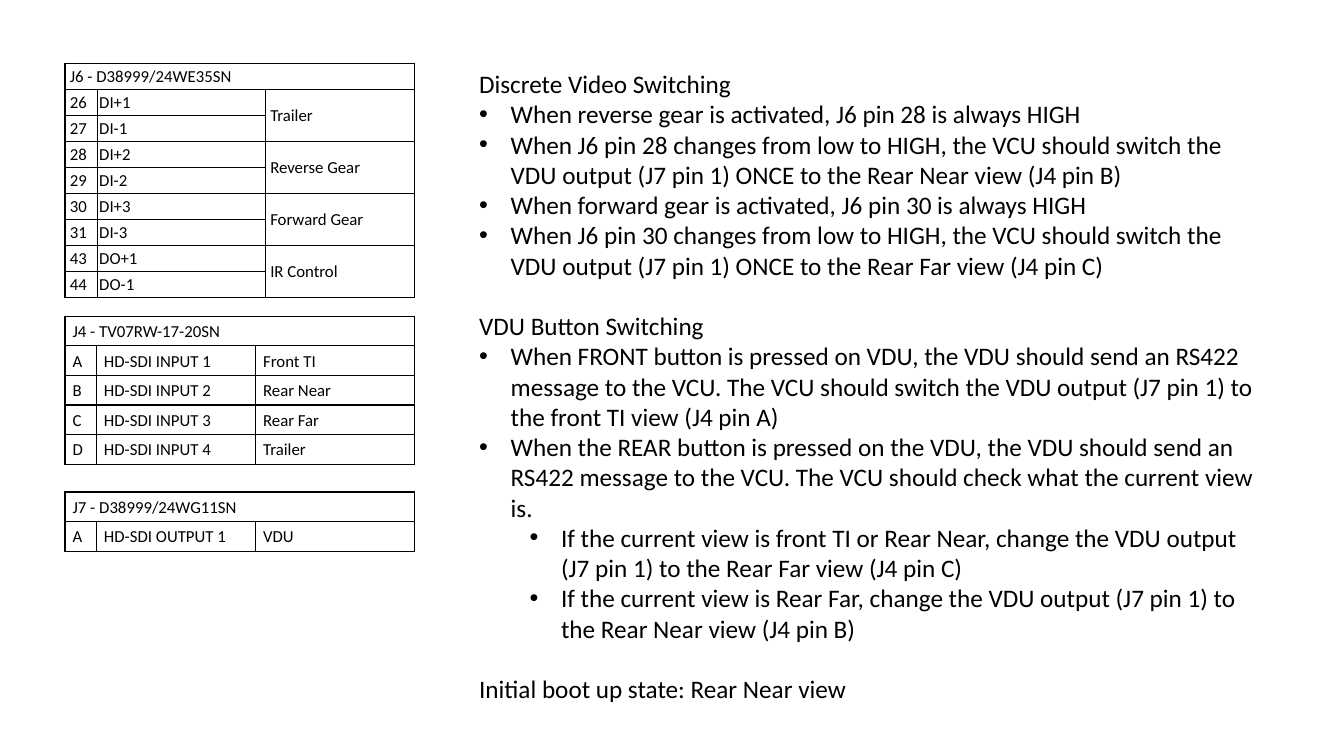
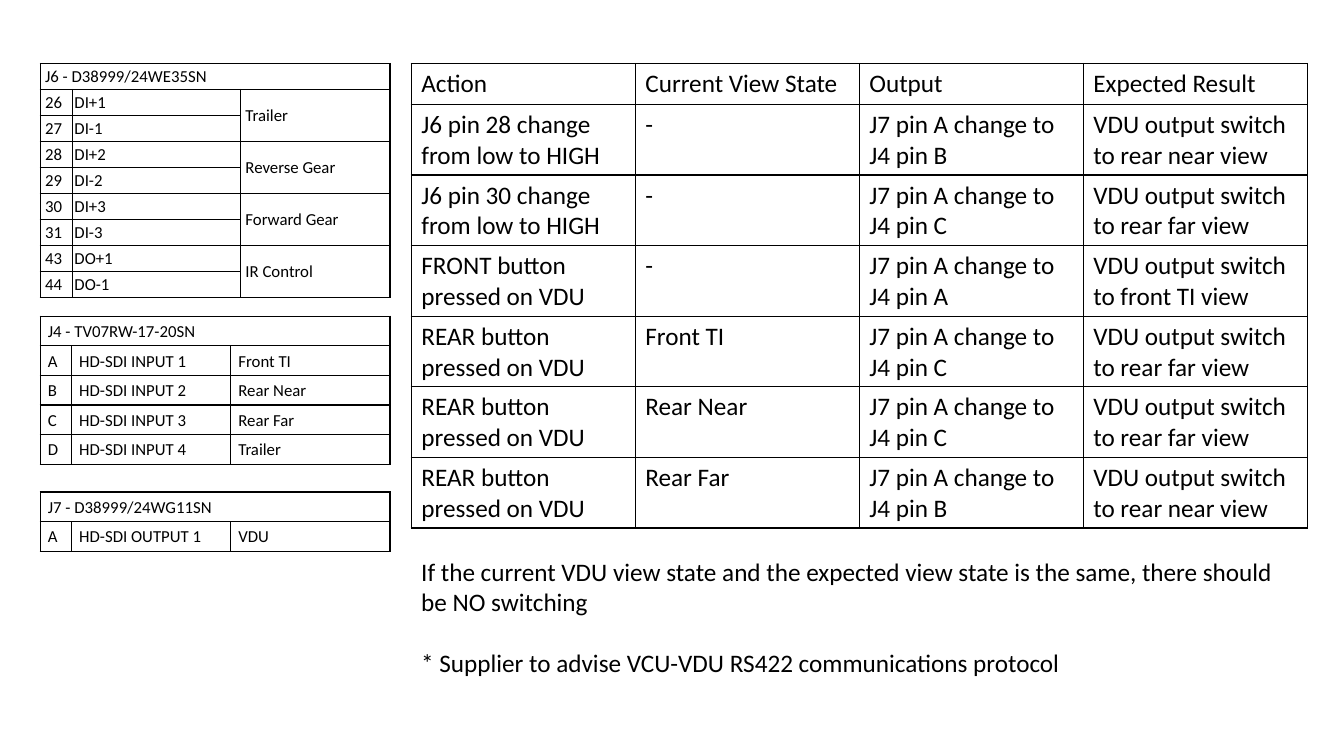
from lxml.etree import SubElement
from pptx import Presentation
from pptx.dml.color import RGBColor
from pptx.enum.text import MSO_ANCHOR, MSO_AUTO_SIZE
from pptx.oxml.ns import qn
from pptx.util import Pt

COLORS = {"ink": "000000", "paper": "FFFFFF"}
FONT = "Calibri"
PIN_SIZE, BODY_SIZE = 12, 18
TOP = 45.4
PIN_WIDTH = 249.8
BLANK_LINE = 21.6
BULLET_INDENT, LEVEL_STEP = 22.5, 36

DISCRETE_PINS = [
    ("26", "DI+1", "Trailer"), ("27", "DI-1", None),
    ("28", "DI+2", "Reverse Gear"), ("29", "DI-2", None),
    ("30", "DI+3", "Forward Gear"), ("31", "DI-3", None),
    ("43", "DO+1", "IR Control"), ("44", "DO-1", None),
]
VIDEO_VIEWS = ["Front TI", "Rear Near", "Rear Far", "Trailer"]
VIDEO_INPUTS = [
    (pin, f"HD-SDI INPUT {number}", view)
    for number, (pin, view) in enumerate(zip("ABCD", VIDEO_VIEWS), 1)
]
VIDEO_OUTPUTS = [("A", "HD-SDI OUTPUT 1", "VDU")]

SWITCHING_RULES = [
    (None, 0, "Discrete Video Switching"),
    (0, 0, "When reverse gear is activated, J6 pin 28 is always HIGH"),
    (0, 0, "When J6 pin 28 changes from low to HIGH, the VCU should switch the "
           "VDU output (J7 pin 1) ONCE to the Rear Near view (J4 pin B)"),
    (0, 0, "When forward gear is activated, J6 pin 30 is always HIGH"),
    (0, 0, "When J6 pin 30 changes from low to HIGH, the VCU should switch the "
           "VDU output (J7 pin 1) ONCE to the Rear Far view (J4 pin C)"),
    (None, BLANK_LINE, "VDU Button Switching"),
    (0, 0, "When FRONT button is pressed on VDU, the VDU should send an RS422 "
           "message to the VCU. The VCU should switch the VDU output (J7 pin 1) "
           "to the front TI view (J4 pin A)"),
    (0, 0, "When the REAR button is pressed on the VDU, the VDU should send an "
           "RS422 message to the VCU. The VCU should check what the current view is."),
    (1, 0, "If the current view is front TI or Rear Near, change the VDU output "
           "(J7 pin 1) to the Rear Far view (J4 pin C)"),
    (1, 0, "If the current view is Rear Far, change the VDU output (J7 pin 1) to "
           "the Rear Near view (J4 pin B)"),
    (None, BLANK_LINE, "Initial boot up state: Rear Near view"),
]
SWITCHING_NOTES = [
    (None, 0, "If the current VDU view state and the expected view state is the "
              "same, there should be NO switching"),
    (None, BLANK_LINE, "* Supplier to advise VCU-VDU RS422 communications protocol"),
]

TEST_HEADINGS = ("Action", "Current View State", "Output", "Expected Result")
TEST_CASES = [
    ("J6 pin 28 change from low to HIGH", "-", "B", "rear near"),
    ("J6 pin 30 change from low to HIGH", "-", "C", "rear far"),
    ("FRONT button pressed on VDU", "-", "A", "front TI"),
    ("REAR button pressed on VDU", "Front TI", "C", "rear far"),
    ("REAR button pressed on VDU", "Rear Near", "C", "rear far"),
    ("REAR button pressed on VDU", "Rear Far", "B", "rear near"),
]


def add_run(paragraph, words, size):
    run = paragraph.add_run()
    run.text = words
    run.font.size = Pt(size)
    run.font.name = FONT
    run.font.color.rgb = RGBColor.from_string(COLORS["ink"])


def add_borders(cell):
    properties = cell._tc.get_or_add_tcPr()
    for edge in ("a:lnL", "a:lnR", "a:lnT", "a:lnB"):
        line = SubElement(properties, qn(edge), w=str(Pt(1)))
        fill = SubElement(line, qn("a:solidFill"))
        SubElement(fill, qn("a:srgbClr"), val=COLORS["ink"])


def add_grid(slide, left, top, widths, heights):
    grid = slide.shapes.add_table(
        len(heights), len(widths), Pt(left), Pt(top), Pt(sum(widths)), Pt(sum(heights))
    ).table
    grid.first_row = grid.horz_banding = False
    for column, width in zip(grid.columns, widths):
        column.width = Pt(width)
    for row, height in zip(grid.rows, heights):
        row.height = Pt(height)
    for cell in grid.iter_cells():
        add_borders(cell)
        cell.fill.background()
    return grid


def add_pinout(slide, left, top, title, pins, widths, row_height, insets):
    rows = [(title, None, None), *pins]
    grid = add_grid(slide, left, top, widths, [row_height] * len(rows))
    grid.cell(0, 0).merge(grid.cell(0, 2))
    for row_index, row in enumerate(rows):
        for column_index, (words, inset) in enumerate(zip(row, insets)):
            cell = grid.cell(row_index, column_index)
            cell.margin_left = cell.margin_right = Pt(inset)
            cell.margin_top = cell.margin_bottom = 0
            cell.vertical_anchor = MSO_ANCHOR.MIDDLE
            if words is not None:
                paragraph = cell.text_frame.paragraphs[0]
                paragraph.line_spacing = 1.07
                add_run(paragraph, words, PIN_SIZE)
            elif row_index:
                grid.cell(row_index - 1, column_index).merge(cell)


def add_connector_pinouts(slide, left, top):
    discrete_widths = (23, 120.2, PIN_WIDTH - 143.2)
    video_widths = (22.4, 113.7, 113.7)
    add_pinout(slide, left, top, "J6 - D38999/24WE35SN", DISCRETE_PINS,
               discrete_widths, 18.56, (3.4, 1.4, 3.4))
    for offset, title, pins in (
        (180.4, "J4 - TV07RW-17-20SN", VIDEO_INPUTS),
        (306, "J7 - D38999/24WG11SN", VIDEO_OUTPUTS),
    ):
        add_pinout(slide, left, top + offset, title, pins, video_widths, 21.2, (5.4,) * 3)


def add_bullet(paragraph, level):
    properties = paragraph._p.get_or_add_pPr()
    properties.set("marL", str(Pt(BULLET_INDENT + level * LEVEL_STEP)))
    properties.set("indent", str(-Pt(BULLET_INDENT)))
    SubElement(properties, qn("a:buFont"), typeface="Arial")
    SubElement(properties, qn("a:buChar"), char="•")
    paragraph.level = level


def add_statements(slide, left, top, width, height, statements):
    frame = slide.shapes.add_textbox(Pt(left), Pt(top), Pt(width), Pt(height)).text_frame
    frame.word_wrap = True
    frame.auto_size = MSO_AUTO_SIZE.SHAPE_TO_FIT_TEXT
    for index, (level, gap, words) in enumerate(statements):
        paragraph = frame.add_paragraph() if index else frame.paragraphs[0]
        if level is not None:
            add_bullet(paragraph, level)
        if gap:
            paragraph.space_before = Pt(gap)
        add_run(paragraph, words, BODY_SIZE)


def add_test_cases(slide, left, top, width):
    rows = [TEST_HEADINGS] + [
        (action, state, f"J7 pin A change to J4 pin {pin}", f"VDU output switch to {view} view")
        for action, state, pin, view in TEST_CASES
    ]
    widths = [width / len(TEST_HEADINGS)] * len(TEST_HEADINGS)
    grid = add_grid(slide, left, top, widths, [29.2] + [50.4] * len(TEST_CASES))
    for row_index, row in enumerate(rows):
        for column_index, words in enumerate(row):
            cell = grid.cell(row_index, column_index)
            add_run(cell.text_frame.paragraphs[0], words, BODY_SIZE)


def add_page(deck):
    slide = deck.slides.add_slide(deck.slide_layouts[6])
    slide.background.fill.solid()
    slide.background.fill.fore_color.rgb = RGBColor.from_string(COLORS["paper"])
    return slide


def build_rules_slide(deck):
    slide = add_page(deck)
    add_connector_pinouts(slide, 46.5, TOP)
    add_statements(slide, 335.2, TOP, 571, 465, SWITCHING_RULES)


def build_tests_slide(deck):
    slide = add_page(deck)
    left, width = 293.8, 640
    add_connector_pinouts(slide, 28.8, TOP)
    add_test_cases(slide, left, TOP, width)
    add_statements(slide, left, 394, width, 94.5, SWITCHING_NOTES)


def main():
    deck = Presentation()
    deck.slide_width, deck.slide_height = Pt(960), Pt(540)
    build_rules_slide(deck)
    build_tests_slide(deck)
    deck.save("out.pptx")


if __name__ == "__main__":
    main()
